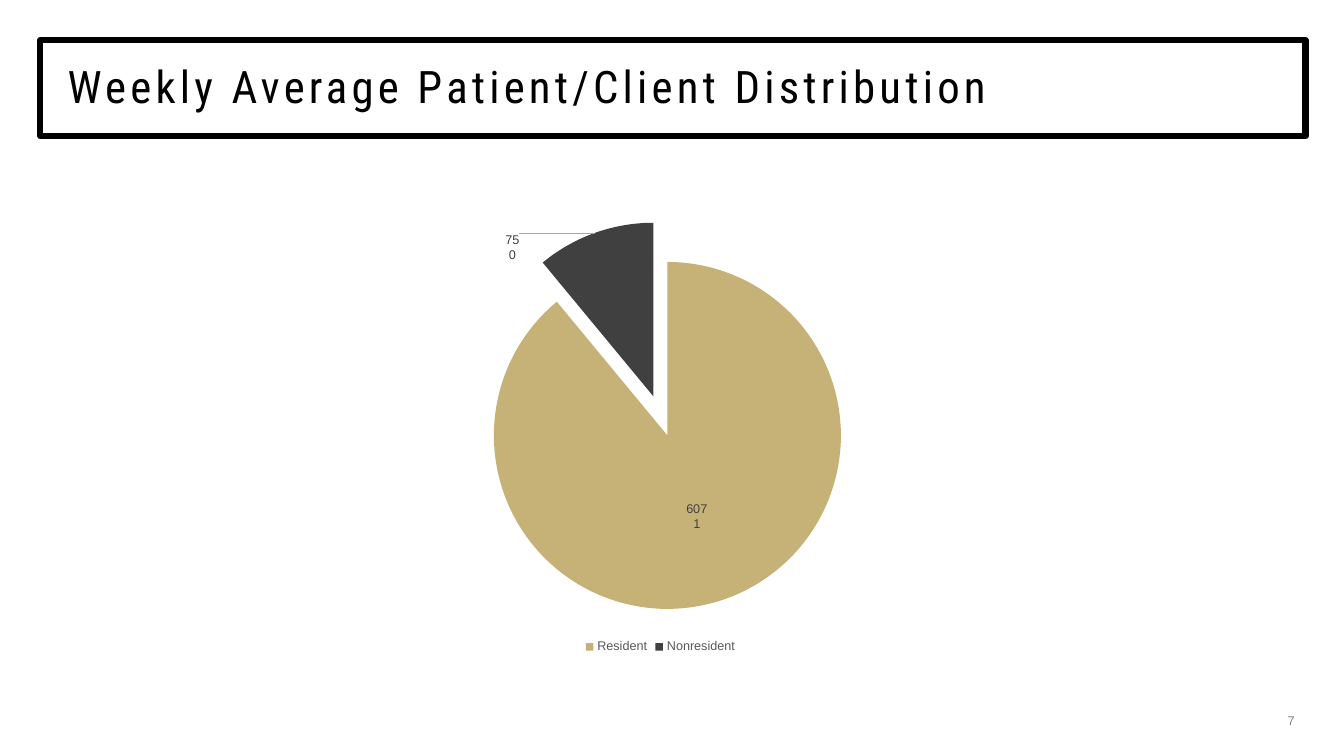
from lxml import etree
from pptx import Presentation
from pptx.chart.data import CategoryChartData
from pptx.dml.color import RGBColor
from pptx.enum.chart import XL_CHART_TYPE as Chart
from pptx.enum.chart import XL_LABEL_POSITION as LabelPos
from pptx.enum.chart import XL_LEGEND_POSITION as LegendPos
from pptx.enum.shapes import MSO_SHAPE as Shape
from pptx.enum.text import MSO_ANCHOR as Anchor
from pptx.enum.text import PP_ALIGN as Align
from pptx.oxml import parse_xml
from pptx.oxml.ns import nsdecls, qn
from pptx.util import Pt

PX = 9144


def px(*values):
    return [v * PX for v in values]


def rgb(value):
    return RGBColor.from_string(value)


def manual_layout(inner=False, **fractions):
    target = '<c:layoutTarget val="inner"/>' if inner else ""
    modes = "".join(f'<c:{k}Mode val="edge"/>' for k in "xy") if inner else ""
    parts = "".join(f'<c:{k} val="{v}"/>' for k, v in fractions.items())
    return parse_xml(f'<c:layout {nsdecls("c")}><c:manualLayout>{target}{modes}{parts}'
                     '</c:manualLayout></c:layout>')


class SlideBuilder:
    """Holds the style and the current slide, with a method per element."""

    font = "Arial"
    title_font = "Roboto Condensed"
    black, dark, gold = "000000", "404040", "C6B277"
    legend_gray, number_gray, leader_gray = "595959", "7F7F7F", "A6A6A6"

    def __init__(self, prs):
        self.s = prs.slides.add_slide(prs.slide_layouts[6])

    def style(self, font, size, color, name=None):
        for key, value in {"size": Pt(size), "name": name or self.font}.items():
            setattr(font, key, value)
        font.color.rgb = rgb(color)

    def frame(self, box, width):
        sp = self.s.shapes.add_shape(Shape.RECTANGLE, *px(*box))
        sp.shadow.inherit = False
        sp.fill.background()
        sp.line.color.rgb = rgb(self.black)
        sp.line.width = Pt(width)

    def text(self, box, words, size, color, name=None, spacing=0, inset=None, **para):
        tf = self.s.shapes.add_textbox(*px(*box)).text_frame
        tf.word_wrap = True
        tf.vertical_anchor = Anchor.MIDDLE
        if inset is not None:
            for side in ("left", "top", "right", "bottom"):
                setattr(tf, f"margin_{side}", inset * PX)
        p = tf.paragraphs[0]
        for key, value in para.items():
            setattr(p, key, value)
        r = p.add_run()
        r.text = words
        self.style(r.font, size, color, name)
        if spacing:
            r.font._element.set("spc", str(spacing * 100))

    def show_percent(self, labels):
        labels.find(qn("c:showPercent")).set("val", "1")
        separator = etree.Element(qn("c:separator"))
        separator.text = "\n"
        labels.find(qn("c:showBubbleSize")).addnext(separator)

    def pie(self, box, values, colors, explosion, plot_area, moved_label):
        data = CategoryChartData(number_format="#,##0")
        data.categories = list(values)
        data.add_series("Series 1", list(values.values()))
        chart = self.s.shapes.add_chart(Chart.PIE, *px(*box), data).chart
        self.style(chart.font, 10, self.black)
        chart.has_title = False
        chart.has_legend = True
        legend = chart.legend
        legend.position = LegendPos.BOTTOM
        legend.include_in_layout = False
        self.style(legend.font, 9, self.legend_gray)

        area = chart._chartSpace.chart.plotArea
        for old in area.findall(qn("c:layout")):
            area.remove(old)
        area.insert(0, manual_layout(inner=True, **plot_area))

        plot = chart.plots[0]
        plot.vary_by_categories = True
        series = plot.series[0]
        for i, color in enumerate(colors):
            fill = series.points[i].format.fill
            fill.solid()
            fill.fore_color.rgb = rgb(color)
        exploded = etree.Element(qn("c:explosion"), val=str(explosion))
        series._element.find(qn("c:dPt")).addprevious(exploded)
        self.pie_labels(series, moved_label)

    def pie_labels(self, series, moved_label):
        labels = series.data_labels
        formats = {"show_value": True, "position": LabelPos.CENTER,
                   "number_format": "#,##0", "number_format_is_linked": False}
        for key, value in formats.items():
            setattr(labels, key, value)
        self.style(labels.font, 9, self.dark)
        group = series._element.find(qn("c:dLbls"))
        self.show_percent(group)
        group.append(parse_xml(
            f'<c:leaderLines {nsdecls("c", "a")}><c:spPr><a:ln w="9525"><a:solidFill>'
            f'<a:srgbClr val="{self.leader_gray}"/></a:solidFill></a:ln></c:spPr>'
            '</c:leaderLines>'))

        index, offset = moved_label
        label = series.points[index].data_label
        label.position = LabelPos.CENTER
        self.style(label.font, 9, self.dark)
        single = group.find(qn("c:dLbl"))
        single.find(qn("c:idx")).addnext(manual_layout(**offset))
        self.show_percent(single)


def main():
    prs = Presentation()
    prs.slide_width, prs.slide_height = px(1333, 750)
    b = SlideBuilder(prs)
    b.frame((40, 40, 1255, 95), 4.5)
    b.text((1218, 701, 76, 27), "7", 9, b.number_gray,
           alignment=Align.RIGHT, space_after=Pt(6))
    b.text((67, 41, 1202, 95), "Weekly Average Patient/Client Distribution", 32,
           b.black, b.title_font, spacing=3, inset=0, line_spacing=0.9)
    b.pie((40, 177, 1230, 476), {"Resident": 607, "Nonresident": 75},
          (b.gold, b.dark), 12,
          plot_area={"x": 0.34, "y": 0.09, "w": 0.32, "h": 0.81},
          moved_label=(1, {"x": -0.09, "y": -0.14}))
    prs.save("out.pptx")


if __name__ == "__main__":
    main()
